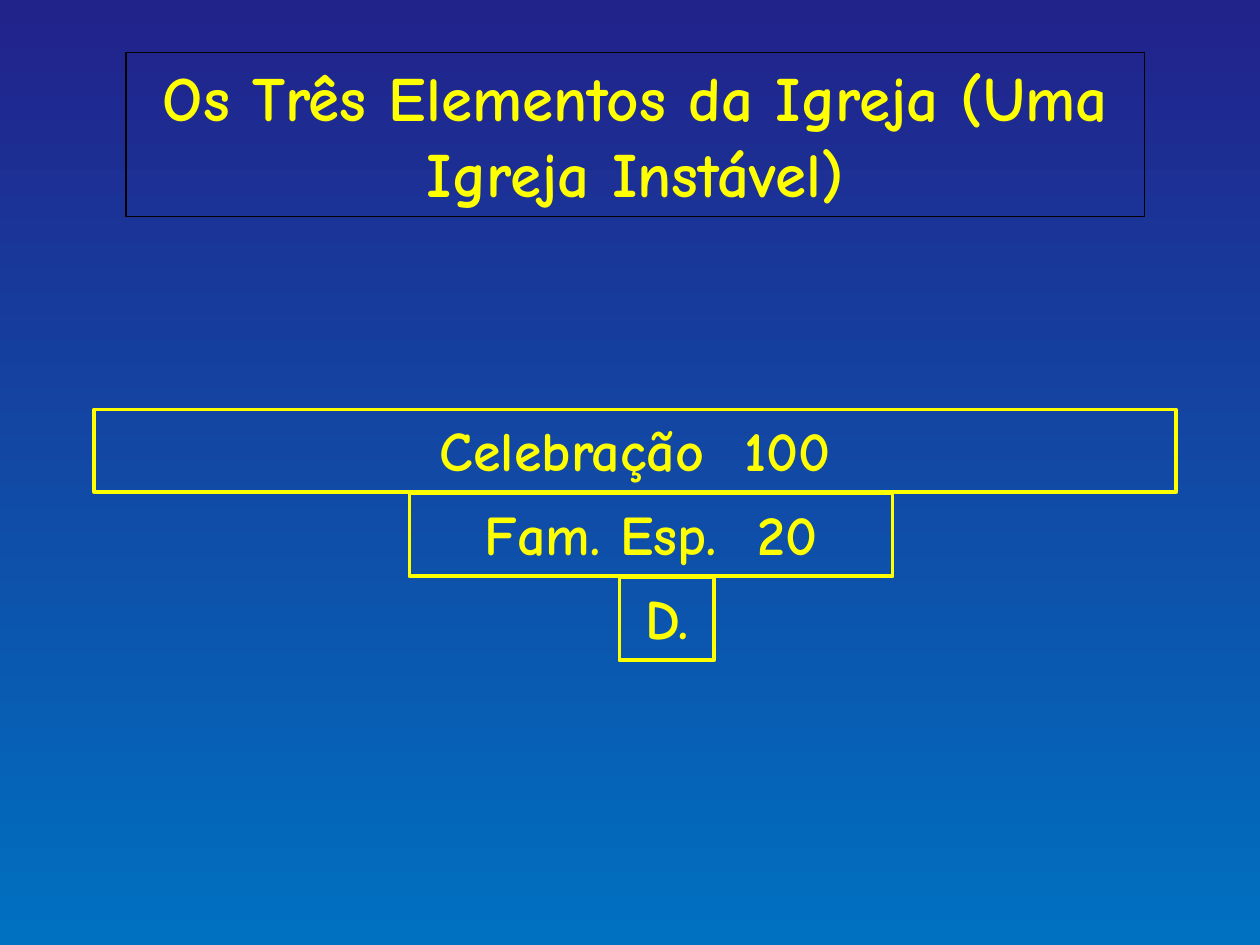
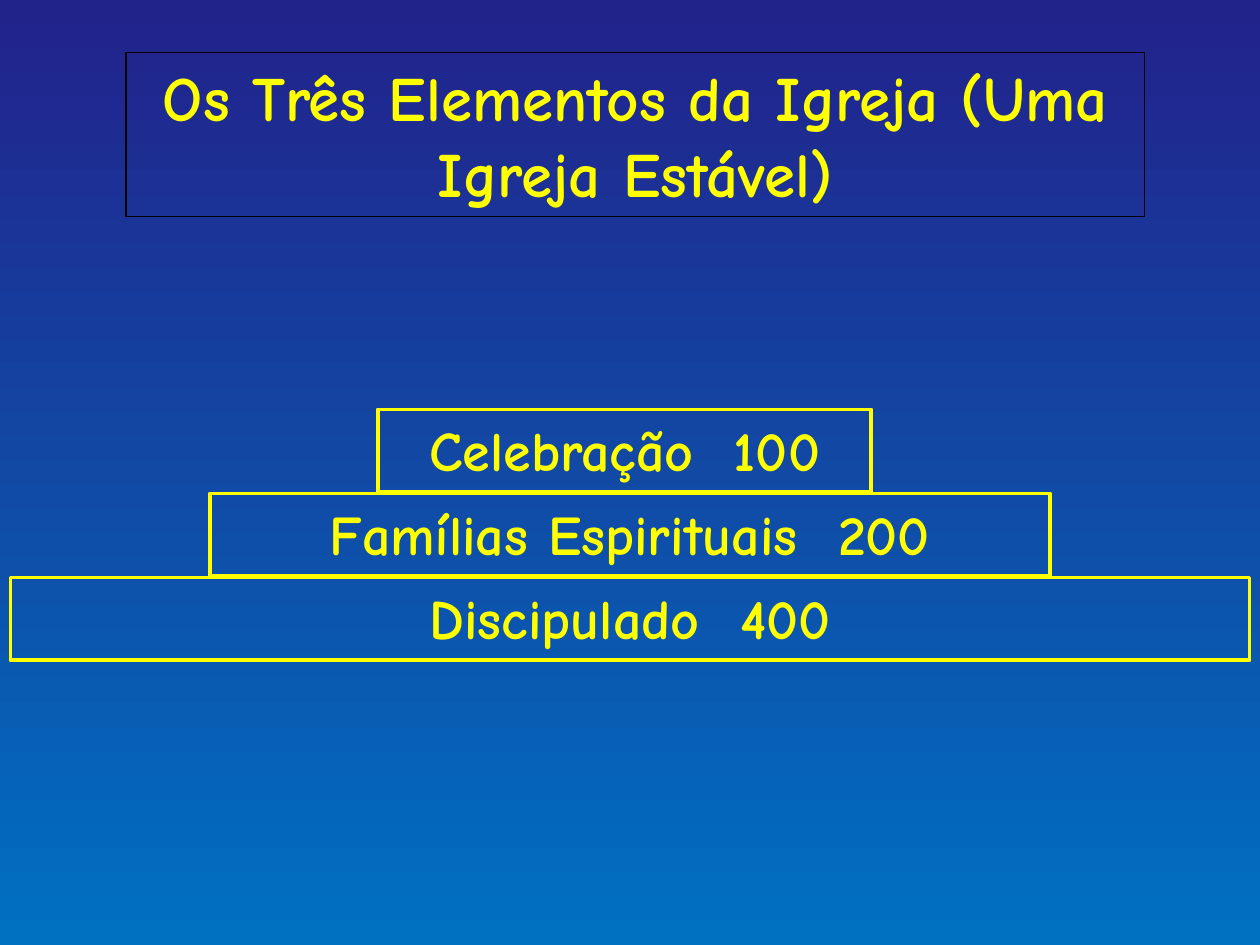
from pptx import Presentation
from pptx.dml.color import RGBColor
from pptx.enum.shapes import MSO_SHAPE
from pptx.enum.text import MSO_ANCHOR, MSO_AUTO_SIZE, PP_ALIGN
from pptx.util import Emu, Pt

# Shared style
COLOURS = {
    "sky_top": "22228B",
    "sky_bottom": "0070C0",
    "accent": "FFFF00",
    "title_frame": "000000",
}
FONT = "Comic Neue"
EMU_PER_PX = 9525
NUMBER_GAP = 1150  # extra letter spacing, in hundredths of a point

# Shared layout, in px
TITLE_BOX = (96, 40, 776, 125)
TIER_TOP, TIER_STEP, TIER_HEIGHT = 312, 64, 63

# Each tier: left, width, name, number of people
SLIDES = [
    ("Os Três Elementos da Igreja (Uma Igreja Instável)", [
        (72, 824, "Celebração", "100"),
        (312, 368, "Fam. Esp.", "20"),
        (472, 72, "D.", None),
    ]),
    ("Os Três Elementos da Igreja (Uma Igreja Estável)", [
        (288, 376, "Celebração", "100"),
        (160, 640, "Famílias Espirituais", "200"),
        (8, 944, "Discipulado", "400"),
    ]),
]


def px(length):
    return Emu(length * EMU_PER_PX)


def colour(name):
    return RGBColor.from_string(COLOURS[name])


def paint_background(slide):
    fill = slide.background.fill
    fill.gradient()
    fill.gradient_angle = 270
    for stop, name in zip(fill.gradient_stops, ("sky_top", "sky_bottom")):
        stop.color.rgb = colour(name)


def add_run(paragraph, text, size):
    run = paragraph.add_run()
    run.text = text
    run.font.name = FONT
    run.font.size = Pt(size)
    run.font.bold = True
    run.font.color.rgb = colour("accent")
    return run


def add_frame(slide, box, line_colour, line_width):
    """Add an outlined rectangle and return its centred paragraph."""
    shape = slide.shapes.add_shape(MSO_SHAPE.RECTANGLE, *map(px, box))
    shape.shadow.inherit = False
    shape.fill.background()
    shape.line.color.rgb = colour(line_colour)
    shape.line.width = Pt(line_width)
    frame = shape.text_frame
    frame.word_wrap = True
    frame.auto_size = MSO_AUTO_SIZE.SHAPE_TO_FIT_TEXT
    frame.vertical_anchor = MSO_ANCHOR.TOP
    paragraph = frame.paragraphs[0]
    paragraph.alignment = PP_ALIGN.CENTER
    return paragraph


def add_title(slide, text):
    paragraph = add_frame(slide, TITLE_BOX, "title_frame", 0.75)
    add_run(paragraph, text, 36)


def add_tier(slide, level, left, width, name, number):
    box = (left, TIER_TOP + level * TIER_STEP, width, TIER_HEIGHT)
    paragraph = add_frame(slide, box, "accent", 2.25)
    add_run(paragraph, name, 32)
    if number:
        gap = add_run(paragraph, " ", 32)
        gap.font._element.set("spc", str(NUMBER_GAP))
        add_run(paragraph, number, 32)


def main():
    presentation = Presentation()
    presentation.slide_width = px(960)
    presentation.slide_height = px(720)
    blank_layout = presentation.slide_layouts[6]
    for title, tiers in SLIDES:
        slide = presentation.slides.add_slide(blank_layout)
        paint_background(slide)
        add_title(slide, title)
        for level, tier in enumerate(tiers):
            add_tier(slide, level, *tier)
    presentation.save("out.pptx")


if __name__ == "__main__":
    main()
